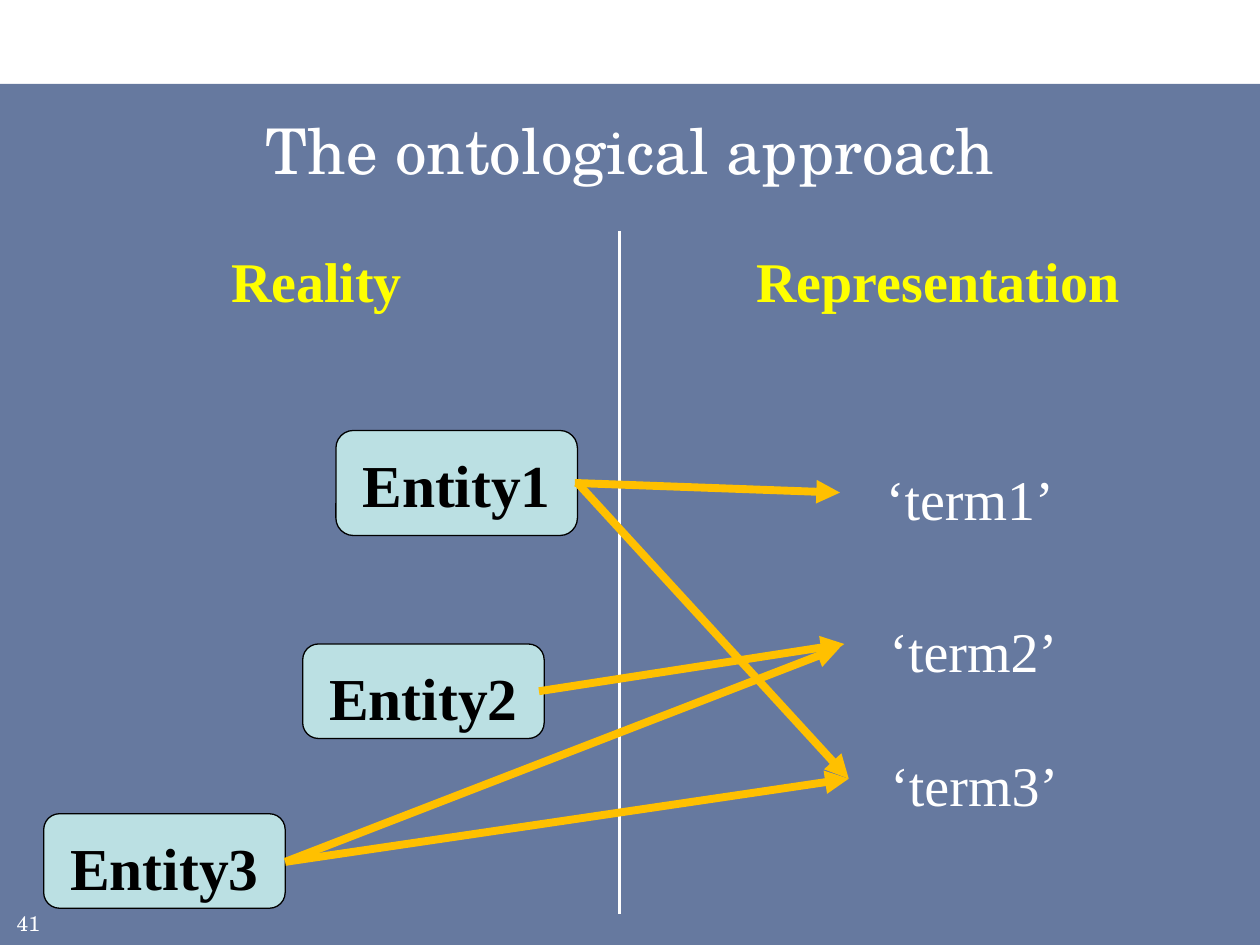
from dataclasses import dataclass
from lxml.etree import SubElement as Sub
from pptx import Presentation
from pptx.dml.color import RGBColor as RGB
from pptx.enum.shapes import MSO_CONNECTOR as Conn, MSO_SHAPE as Shape
from pptx.enum.text import MSO_ANCHOR as Anchor, PP_ALIGN as Align
from pptx.oxml.ns import qn
from pptx.util import Pt


@dataclass(frozen=True)
class Theme:
    navy: str = "002060"
    white: str = "FFFFFF"
    black: str = "000000"
    yellow: str = "FFFF00"
    aqua: str = "BBE0E3"
    amber: str = "FFC000"
    school: str = "TeX Gyre Schola"
    roman: str = "Times New Roman"
    title: int = 36
    node: int = 34
    label: int = 32
    small: int = 12


class Page:
    def __init__(self, deck, theme):
        self.theme = theme
        self.slide = deck.slides.add_slide(deck.slide_layouts[5])
        self.shapes = self.slide.shapes

    def place(self, shape, box):
        shape.left, shape.top, shape.width, shape.height = map(Pt, box)

    def fill_text(self, shape, text, size, color, face, bold=False,
                  align=Align.CENTER, anchor=Anchor.TOP, top=3.6, left=7.2,
                  wrap=True):
        frame = shape.text_frame
        frame.word_wrap = wrap
        frame.vertical_anchor = anchor
        frame.margin_top, frame.margin_left = Pt(top), Pt(left)
        frame.margin_bottom = 0
        para = frame.paragraphs[0]
        para.alignment = align
        run = para.add_run()
        run.text = text
        font = run.font
        font.size, font.name, font.bold = Pt(size), face, bold
        font.color.rgb = RGB.from_string(color)

    def title(self, text, box):
        t = self.theme
        self.place(self.shapes.title, box)
        self.fill_text(self.shapes.title, text, t.title, t.white, t.school)

    def band(self, box, alpha):
        band = self.shapes.add_shape(Shape.RECTANGLE, *map(Pt, box))
        band.shadow.inherit = False
        band.fill.solid()
        band.fill.fore_color.rgb = RGB.from_string(self.theme.navy)
        band.line.fill.background()
        tint = band._element.spPr.find(".//" + qn("a:srgbClr"))
        Sub(tint, qn("a:alpha")).set("val", str(alpha * 1000))
        # Behind the title
        self.shapes._spTree.insert(2, band._element)

    def label(self, text, box, size, color, face, **style):
        shape = self.shapes.add_textbox(*map(Pt, box))
        self.fill_text(shape, text, size, color, face, **style)

    def node(self, text, box):
        t = self.theme
        node = self.shapes.add_shape(Shape.ROUNDED_RECTANGLE, *map(Pt, box))
        node.shadow.inherit = False
        node.fill.solid()
        node.fill.fore_color.rgb = RGB.from_string(t.aqua)
        node.line.color.rgb = RGB.from_string(t.black)
        node.line.width = Pt(0.75)
        self.fill_text(node, text, t.node, t.black, t.roman, bold=True, top=7)

    def line(self, start, end, color, width, arrow=False):
        link = self.shapes.add_connector(Conn.STRAIGHT, *map(Pt, start + end))
        link.line.color.rgb = RGB.from_string(color)
        link.line.width = Pt(width)
        props = link._element.spPr
        if arrow:
            Sub(props.find(qn("a:ln")), qn("a:tailEnd")).set("type", "triangle")
        Sub(props, qn("a:effectLst"))


def main():
    deck = Presentation()
    deck.slide_width, deck.slide_height = Pt(720), Pt(540)
    t = Theme()
    page = Page(deck, t)

    # Backdrop, title and page number
    page.band((0, 48, 720, 492), 60)
    page.title("The ontological approach", (18, 60, 684, 60))
    page.label("41", (0, 511, 30, 29), t.small, t.white, t.school,
               align=Align.RIGHT, anchor=Anchor.MIDDLE, left=0, wrap=False)

    # Two halves
    page.line((354, 132), (354, 522), t.white, 2.25)
    for text, left, width in (("Reality", 124.5, 113), ("Representation", 424, 224)):
        page.label(text, (left, 134, width, 46), t.label, t.yellow, t.roman,
                   bold=True, top=7, wrap=False)

    # Entities
    for text, left, top, height in (("Entity1", 192, 246, 60),
                                    ("Entity2", 173, 368, 54),
                                    ("Entity3", 25, 465, 54)):
        page.node(text, (left, top, 138, height))

    # Terms
    for text, left, top in (("‘term1’", 482.5, 258.5),
                            ("‘term2’", 484.5, 345),
                            ("‘term3’", 485, 422)):
        page.label(text, (left, top, 127.5, 46), t.label, t.white, t.roman,
                   top=7, left=23.2, wrap=False)

    # Links from entities to terms
    first, third, last = (330, 276), (163, 492.5), (485, 445)
    for start, end in (((328.5, 276), (480, 281.5)),
                       ((308, 395), (482.5, 368)),
                       (third, last), (first, last), (third, (480, 370))):
        page.line(start, end, t.amber, 4.5, arrow=True)

    deck.save("out.pptx")


if __name__ == "__main__":
    main()
